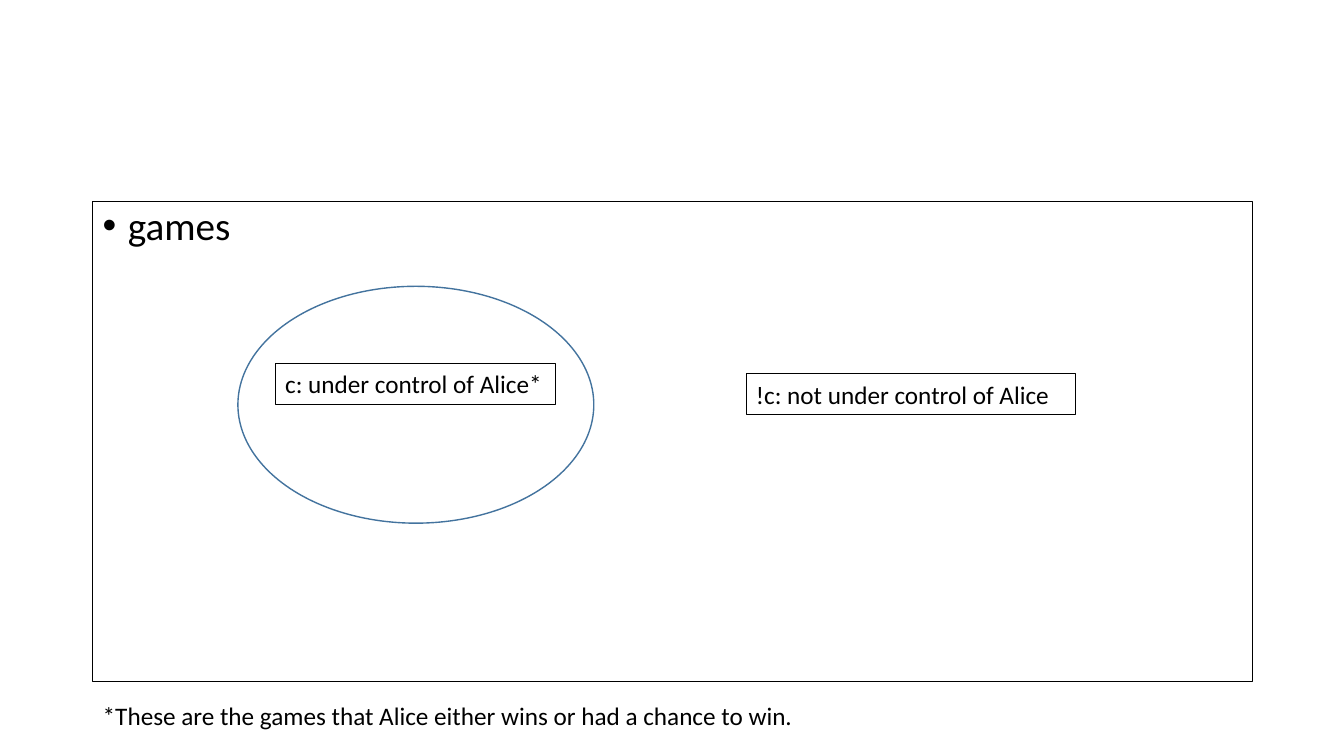
"""Build a slide that divides games by whether Alice controls them."""
from dataclasses import dataclass

from lxml import etree
from pptx import Presentation
from pptx.dml.color import RGBColor
from pptx.enum.shapes import MSO_SHAPE
from pptx.enum.text import MSO_ANCHOR, PP_ALIGN
from pptx.oxml.ns import qn
from pptx.util import Inches, Pt

OVAL = MSO_SHAPE.OVAL
TOP = MSO_ANCHOR.TOP
LEFT = PP_ALIGN.LEFT


@dataclass(frozen=True)
class Theme:
    font: str = "Calibri"
    ink: RGBColor = RGBColor(0x00, 0x00, 0x00)
    set_line: RGBColor = RGBColor(0x43, 0x73, 0x9E)
    heading_size: int = 28
    label_size: int = 18
    border_width: float = 0.75
    set_width: float = 1


def write_text(frame, text, *, font, size, color, spacing=1.0, bullet=None):
    frame.word_wrap = True
    frame.vertical_anchor = TOP
    paragraph = frame.paragraphs[0]
    paragraph.alignment = LEFT
    paragraph.line_spacing = spacing
    run = paragraph.add_run()
    run.text = text
    run.font.name = font
    run.font.size = Pt(size)
    run.font.color.rgb = color
    if bullet:
        properties = paragraph._p.get_or_add_pPr()
        indent = Inches(0.25)
        properties.set("marL", str(indent))
        properties.set("indent", str(-indent))
        etree.SubElement(properties, qn("a:buFont"), typeface="Arial")
        etree.SubElement(properties, qn("a:buChar"), char=bullet)


class SlideBuilder:
    def __init__(self, slide, theme):
        self.slide = slide
        self.theme = theme

    def text(self, content, left, top, width, height, *, size=None, border=False, **style):
        box = self.slide.shapes.add_textbox(
            Inches(left), Inches(top), Inches(width), Inches(height))
        if border:
            box.line.color.rgb = self.theme.ink
            box.line.width = Pt(self.theme.border_width)
        write_text(box.text_frame, content, font=self.theme.font,
                   size=size or self.theme.label_size, color=self.theme.ink, **style)

    def ellipse(self, left, top, width, height):
        oval = self.slide.shapes.add_shape(
            OVAL, Inches(left), Inches(top), Inches(width), Inches(height))
        oval.shadow.inherit = False
        oval.fill.background()
        oval.line.color.rgb = self.theme.set_line
        oval.line.width = Pt(self.theme.set_width)


def main():
    deck = Presentation()
    deck.slide_width = Inches(13.33)
    deck.slide_height = Inches(7.5)
    theme = Theme()
    builder = SlideBuilder(deck.slides.add_slide(deck.slide_layouts[6]), theme)

    builder.text("games", 0.92, 2, 11.5, 4.76, size=theme.heading_size,
                 border=True, spacing=0.9, bullet="•")
    builder.ellipse(2.36, 2.84, 3.53, 2.35)
    builder.text("c: under control of Alice*", 2.73, 3.61, 2.78, 0.4, border=True)
    builder.text("!c: not under control of Alice", 7.4, 3.71, 3.27, 0.4, border=True)
    builder.text("*These are the games that Alice either wins or had a chance to win.",
                 0.92, 6.9, 9.65, 0.4)
    deck.save("out.pptx")


if __name__ == "__main__":
    main()
